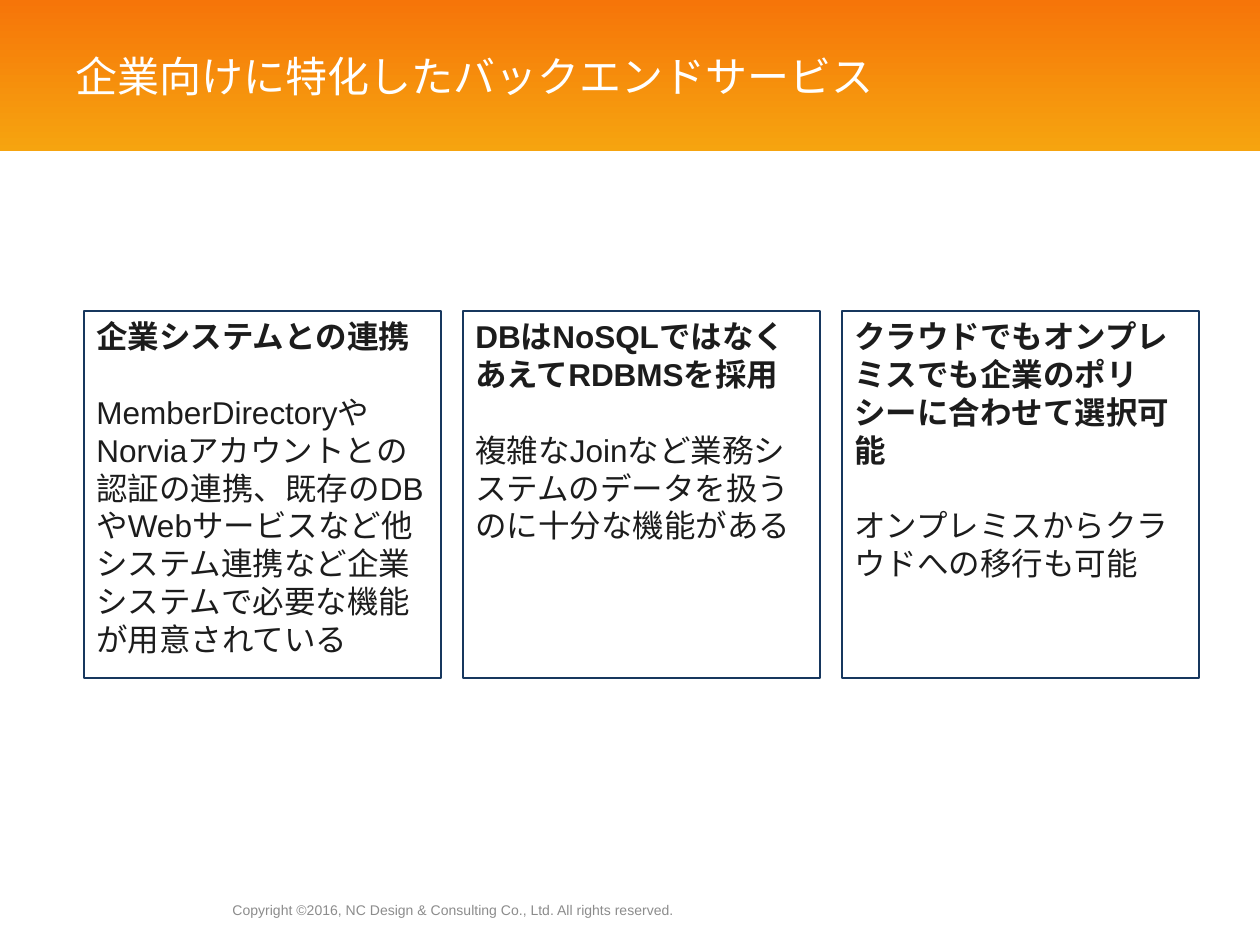
from pptx import Presentation
from pptx.dml.color import RGBColor
from pptx.enum import shapes, text
from pptx.oxml.ns import qn
from pptx.util import Emu, Pt

PX = 914400 / 126
COLORS = {
    "band_top": "F67509",
    "band_bottom": "F6A40F",
    "title": "FFFFFF",
    "body": "1C1C1C",
    "border": "17375E",
    "footer": "8C8C8C",
}
JP_FONT = "Noto Sans CJK JP"


def px(*values):
    return [Emu(round(v * PX)) for v in values]


def write(p, words, size=18, color="body", font="Arial", bold=False, before=0):
    """Fill a paragraph with one left-aligned run, Latin and Japanese fonts set."""
    p.alignment = text.PP_ALIGN.LEFT
    if before:
        p.space_before = Pt(before)
    r = p.add_run()
    r.text = words
    r.font.size = Pt(size)
    r.font.bold = bold
    r.font.name = font
    r.font.color.rgb = RGBColor.from_string(COLORS[color])
    east_asian = r._r.get_or_add_rPr().makeelement(qn("a:ea"), {"typeface": JP_FONT})
    r.font._element.find(qn("a:latin")).addnext(east_asian)


prs = Presentation()
prs.slide_width, prs.slide_height = px(1260, 945)
s = prs.slides.add_slide(prs.slide_layouts[5])
rectangle = shapes.MSO_SHAPE.RECTANGLE

# Header band, sent behind the title
band = s.shapes.add_shape(rectangle, *px(0, 0, 1260, 151))
band.shadow.inherit = False
band.line.fill.background()
band.fill.gradient()
band.fill.gradient_angle = 90
for stop, name in zip(band.fill.gradient_stops, ("band_bottom", "band_top")):
    stop.color.rgb = RGBColor.from_string(COLORS[name])
s.shapes._spTree.insert(2, band._element)

title = s.shapes.title
title.left, title.top, title.width, title.height = px(63, 32, 1137, 88)
tf = title.text_frame
tf.auto_size = text.MSO_AUTO_SIZE.NONE
tf.vertical_anchor = text.MSO_ANCHOR.MIDDLE
write(tf.paragraphs[0], "企業向けに特化したバックエンドサービス",
      size=24, color="title", font=JP_FONT)

# Three feature cards
cards = [
    ("企業システムとの連携",
     "MemberDirectoryやNorviaアカウントとの認証の連携、既存のDBやWebサービスなど"
     "他システム連携など企業システムで必要な機能が用意されている"),
    ("DBはNoSQLではなくあえてRDBMSを採用",
     "複雑なJoinなど業務システムのデータを扱うのに十分な機能がある"),
    ("クラウドでもオンプレミスでも企業のポリシーに合わせて選択可能",
     "オンプレミスからクラウドへの移行も可能"),
]
for i, (heading, body) in enumerate(cards):
    sp = s.shapes.add_shape(rectangle, *px(84 + 379 * i, 311, 357, 367))
    sp.shadow.inherit = False
    sp.fill.background()
    sp.line.color.rgb = RGBColor.from_string(COLORS["border"])
    sp.line.width = Pt(0.75)
    tf = sp.text_frame
    tf.word_wrap = True
    tf.vertical_anchor = text.MSO_ANCHOR.TOP
    write(tf.paragraphs[0], heading, bold=True)
    write(tf.add_paragraph(), body, before=21.7)

footer = s.shapes.add_textbox(*px(220, 895, 536, 35))
footer.text_frame.word_wrap = True
write(footer.text_frame.paragraphs[0],
      "Copyright ©2016, NC Design & Consulting Co., Ltd. All rights reserved.",
      size=8, color="footer")

prs.save("out.pptx")
